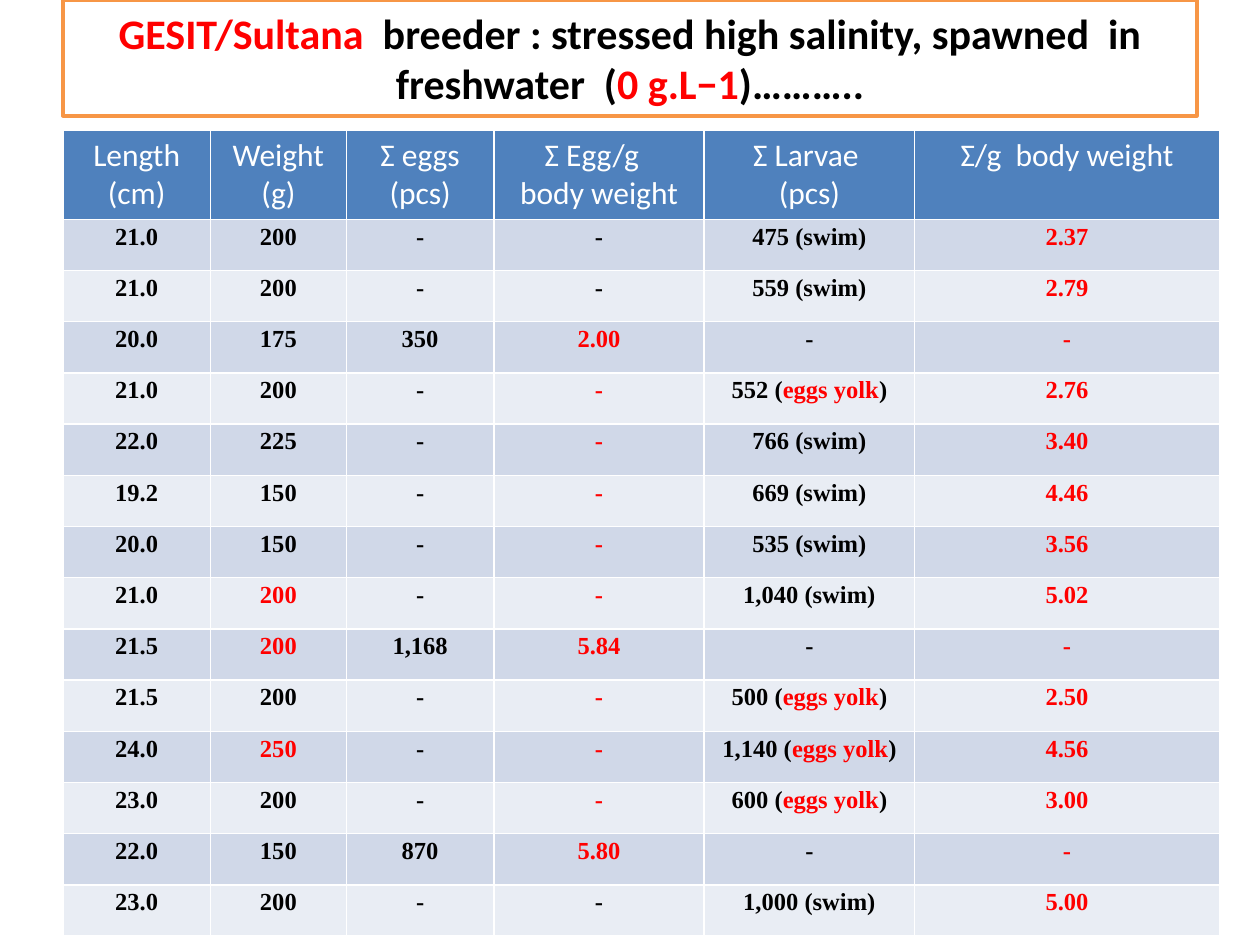
from typing import NamedTuple

from pptx import Presentation
from pptx.dml.color import RGBColor
from pptx.enum.text import MSO_ANCHOR as Anchor, PP_ALIGN as Align
from pptx.util import Inches, Pt

BLACK, RED, WHITE = "000000", "FF0000", "FFFFFF"
ORANGE, HEADER_BLUE = "F79646", "4F81BD"
BANDS = ("D0D8E8", "E9EDF4")


class TextStyle(NamedTuple):
    font: str
    size: int
    bold: bool
    color: str


class Spawning(NamedTuple):
    """One breeder's record; text between asterisks is red."""
    length: str
    weight: str
    eggs: str
    eggs_per_gram: str
    larvae: str
    larvae_per_gram: str


TITLE_STYLE = TextStyle("Calibri", 24, True, BLACK)
HEADER_STYLE = TextStyle("Calibri", 18, False, WHITE)
BODY_STYLE = TextStyle("Times New Roman", 14, True, BLACK)

TITLE = ("*GESIT/Sultana * breeder : stressed high salinity, spawned  in "
         "freshwater  (*0 g.L−1*)………..")
HEADERS = ("Length\n(cm)", "Weight\n(g)", "Ʃ eggs\n(pcs)",
           "Ʃ Egg/g  \nbody weight", "Ʃ Larvae \n(pcs)", "Ʃ/g  body weight")
COLUMN_WIDTHS = (1.17, 1.08, 1.17, 1.67, 1.67, 2.42)
SPAWNINGS = (
    Spawning("21.0", "200", "-", "-", "475 (swim)", "*2.37*"),
    Spawning("21.0", "200", "-", "-", "559 (swim)", "*2.79*"),
    Spawning("20.0", "175", "350", "*2.00*", "-", "*-*"),
    Spawning("21.0", "200", "-", "*-*", "552 (*eggs yolk*)", "*2.76*"),
    Spawning("22.0", "225", "-", "*-*", "766 (swim)", "*3.40*"),
    Spawning("19.2", "150", "-", "*-*", "669 (swim)", "*4.46*"),
    Spawning("20.0", "150", "-", "*-*", "535 (swim)", "*3.56*"),
    Spawning("21.0", "*200*", "-", "*-*", "1,040 (swim)", "*5.02*"),
    Spawning("21.5", "*200*", "1,168", "*5.84*", "-", "*-*"),
    Spawning("21.5", "200", "-", "*-*", "500 (*eggs yolk*)", "*2.50*"),
    Spawning("24.0", "*250*", "-", "*-*", "1,140 (*eggs yolk*)", "*4.56*"),
    Spawning("23.0", "200", "-", "*-*", "600 (*eggs yolk*)", "*3.00*"),
    Spawning("22.0", "150", "870", "*5.80*", "-", "*-*"),
    Spawning("23.0", "200", "-", "-", "1,000 (swim)", "*5.00*"),
)


def paint(color_holder, color: str) -> None:
    """Give a fill a solid colour."""
    color_holder.solid()
    color_holder.fore_color.rgb = RGBColor.from_string(color)


def write(text_frame, text: str, style: TextStyle, spacing: float = 1.0) -> None:
    """Write centred lines, run by run, with the marked parts in red."""
    for index, line in enumerate(text.split("\n")):
        paragraph = text_frame.add_paragraph() if index else text_frame.paragraphs[0]
        paragraph.alignment = Align.CENTER
        paragraph.line_spacing = spacing
        for part, words in enumerate(line.split("*")):
            if words:
                run = paragraph.add_run()
                run.text = words
                run.font.name = style.font
                run.font.size = Pt(style.size)
                run.font.bold = style.bold
                paint(run.font.fill, RED if part % 2 else style.color)


def add_title(slide) -> None:
    title = slide.shapes.title
    title.left, title.top = Inches(0.5), Inches(0)
    title.width, title.height = Inches(9), Inches(0.92)
    paint(title.fill, WHITE)
    paint(title.line.fill, ORANGE)
    title.line.width = Pt(2)
    title.text_frame.word_wrap = True
    title.text_frame.vertical_anchor = Anchor.MIDDLE
    write(title.text_frame, TITLE, TITLE_STYLE)


def add_spawning_table(slide) -> None:
    table = slide.shapes.add_table(
        len(SPAWNINGS) + 1, len(HEADERS), Inches(0.5), Inches(1.03),
        Inches(sum(COLUMN_WIDTHS)), Inches(6.1)).table
    for column, width in zip(table.columns, COLUMN_WIDTHS):
        column.width = Inches(width)

    # Header row
    for cell, text in zip(table.rows[0].cells, HEADERS):
        paint(cell.fill, HEADER_BLUE)
        write(cell.text_frame, text, HEADER_STYLE)

    # Banded records
    for index, spawning in enumerate(SPAWNINGS):
        for cell, text in zip(table.rows[index + 1].cells, spawning):
            paint(cell.fill, BANDS[index % 2])
            cell.margin_left = cell.margin_right = Inches(0.07)
            cell.margin_top = cell.margin_bottom = Inches(0)
            write(cell.text_frame, text, BODY_STYLE, 1.15)


def main() -> None:
    presentation = Presentation()
    presentation.slide_width, presentation.slide_height = Inches(10), Inches(7.5)
    slide = presentation.slides.add_slide(presentation.slide_layouts[5])
    add_title(slide)
    add_spawning_table(slide)
    presentation.save("out.pptx")


if __name__ == "__main__":
    main()
